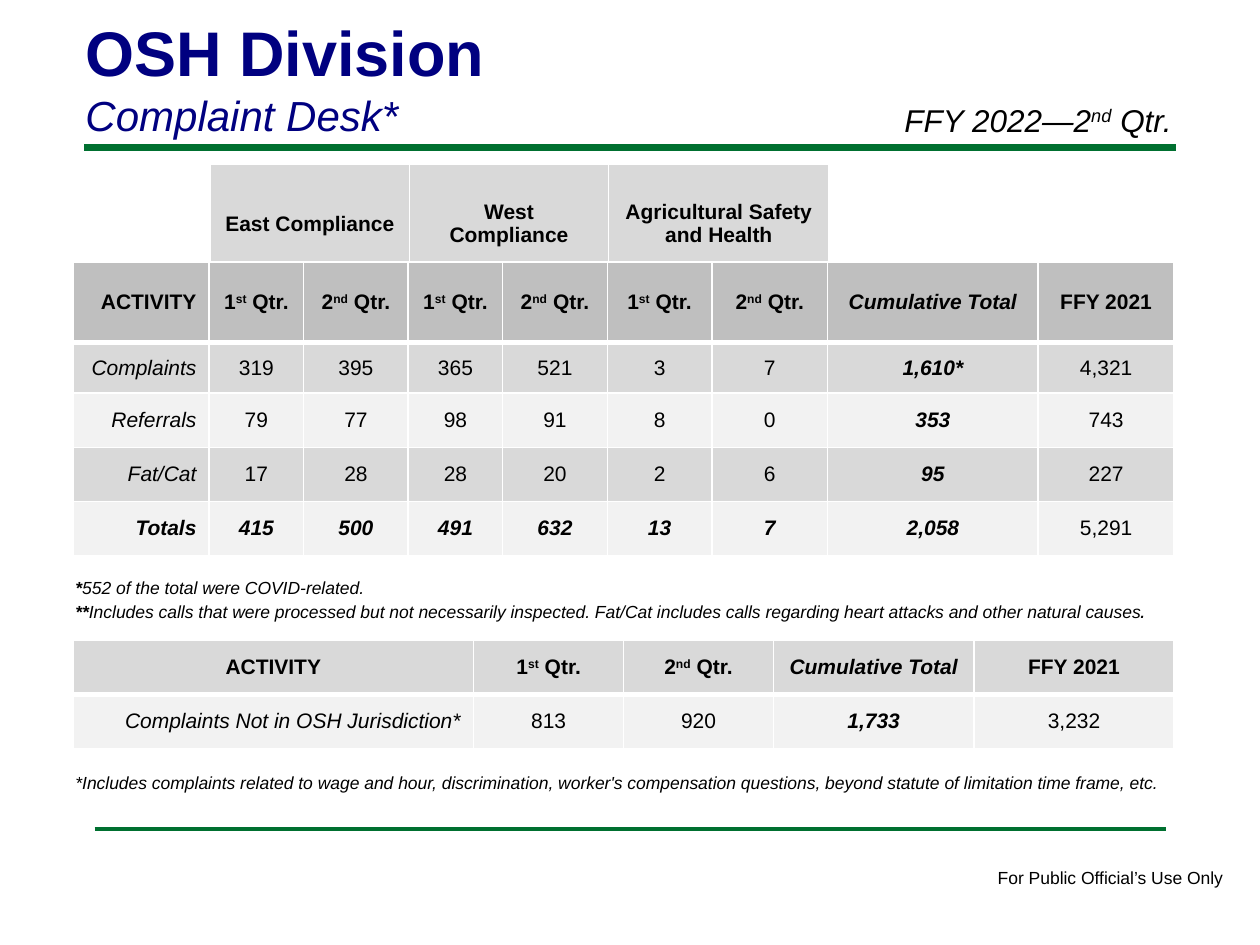
"""Build the OSH Division complaint desk slide."""
from dataclasses import dataclass
from typing import Optional

import pptx
import pptx.dml.color
import pptx.enum.shapes
import pptx.enum.text
import pptx.oxml
import pptx.oxml.ns
import pptx.util

Inches = pptx.util.Inches
Align = pptx.enum.text.PP_ALIGN
COLORS = {
    "green": "007030",
    "navy": "000080",
    "black": "000000",
    "white": "FFFFFF",
    "header": "BFBFBF",
    "dark": "D9D9D9",
    "light": "F2F2F2",
}


@dataclass(frozen=True)
class Piece:
    text: str
    bold: Optional[bool] = None
    size: Optional[float] = None
    raised: bool = False


@dataclass(frozen=True)
class Line:
    pieces: tuple[Piece, ...]
    size: float = 12
    bold: bool = False
    italic: bool = False
    color: str = "black"
    align: Align = Align.LEFT


@dataclass(frozen=True)
class Row:
    height: float
    fill: str
    cells: list[Line]
    bottom: float = 1


@dataclass(frozen=True)
class Rule:
    left: float
    right: float
    y: float
    weight: float


def line(text: str, **style) -> Line:
    return Line((Piece(text),), **style)


def quarter(number: str, suffix: str, **style) -> Line:
    return Line((Piece(number), Piece(suffix, raised=True), Piece(" Qtr.")), **style)


def rgb(name: str) -> pptx.dml.color.RGBColor:
    return pptx.dml.color.RGBColor.from_string(COLORS[name])


def write(tf, lines: list[Line]) -> None:
    for i, item in enumerate(lines):
        p = tf.add_paragraph() if i else tf.paragraphs[0]
        p.alignment = item.align
        p.font.name = "Arial"
        p.font.size = pptx.util.Pt(item.size)
        p.font.bold = item.bold
        p.font.italic = item.italic
        p.font.color.rgb = rgb(item.color)
        for piece in item.pieces:
            r = p.add_run()
            r.text = piece.text
            if piece.bold is not None:
                r.font.bold = piece.bold
            if piece.size:
                r.font.size = pptx.util.Pt(piece.size)
            if piece.raised:
                r.font._element.set("baseline", "30000")


def add_text(s, box: tuple[float, ...], lines: list[Line], wrap: bool = True) -> None:
    tf = s.shapes.add_textbox(*map(Inches, box)).text_frame
    tf.word_wrap = wrap
    write(tf, lines)


def add_rule(s, rule: Rule) -> None:
    y = Inches(rule.y)
    c = s.shapes.add_connector(
        pptx.enum.shapes.MSO_CONNECTOR.STRAIGHT, Inches(rule.left), y, Inches(rule.right), y
    )
    c.line.color.rgb = rgb("green")
    c.line.width = pptx.util.Pt(rule.weight)
    c._element.spPr.append(pptx.oxml.parse_xml(f'<a:effectLst {pptx.oxml.ns.nsdecls("a")}/>'))


def set_borders(cell, bottom: float) -> None:
    tc_pr = cell._tc.get_or_add_tcPr()
    for side, weight in {"L": 1, "R": 1, "T": 1, "B": bottom}.items():
        tc_pr.append(pptx.oxml.parse_xml(
            f'<a:ln{side} {pptx.oxml.ns.nsdecls("a")} w="{pptx.util.Pt(weight)}">'
            f'<a:solidFill><a:srgbClr val="{COLORS["white"]}"/></a:solidFill></a:ln{side}>'
        ))


def add_table(s, left: float, top: float, widths: list[float], rows: list[Row]) -> None:
    height = sum(row.height for row in rows)
    table = s.shapes.add_table(
        len(rows), len(widths), Inches(left), Inches(top), Inches(sum(widths)), Inches(height)
    ).table
    table.first_row = table.horz_banding = False
    for column, width in zip(table.columns, widths):
        column.width = Inches(width)
    for i, row in enumerate(rows):
        table.rows[i].height = Inches(row.height)
        for j, content in enumerate(row.cells):
            cell = table.cell(i, j)
            cell.vertical_anchor = pptx.enum.text.MSO_ANCHOR.MIDDLE
            set_borders(cell, row.bottom)
            cell.fill.solid()
            cell.fill.fore_color.rgb = rgb(row.fill)
            write(cell.text_frame, [content])


def header_cells(label_align: Align, offices: int) -> list[Line]:
    style = {"bold": True, "align": Align.CENTER}
    quarters = [quarter("1", "st", **style), quarter("2", "nd", **style)]
    return [
        line("ACTIVITY", bold=True, align=label_align),
        *quarters * offices,
        line("Cumulative Total", italic=True, **style),
        line("FFY 2021", **style),
    ]


def data_cells(label: str, counts: str, total: str, previous: str, strong: bool = False) -> list[Line]:
    return [
        line(label, bold=strong, italic=True, align=Align.RIGHT),
        *[line(n, bold=strong, italic=strong, align=Align.CENTER) for n in counts.split()],
        line(total, bold=True, italic=True, align=Align.CENTER),
        line(previous, align=Align.CENTER),
    ]


def main() -> None:
    prs = pptx.Presentation()
    prs.slide_width, prs.slide_height = Inches(10), Inches(7.5)
    s = prs.slides.add_slide(prs.slide_layouts[6])

    for rule in (Rule(0.67, 9.33, 1.17, 4), Rule(0.75, 9.25, 6.58, 2)):
        add_rule(s, rule)
    add_text(s, (7.82, 6.83, 2.01, 0.27), [line("For Public Official’s Use Only", size=10)], wrap=False)
    add_text(s, (0.5, 4.53, 8.83, 0.67), [
        Line((Piece("*", bold=True), Piece("552 of the total were COVID-related.")), size=10, italic=True),
        Line((
            Piece("**", bold=True),
            Piece("Includes calls that were processed but not necessarily inspected. "
                  "Fat/Cat includes calls regarding heart attacks and other natural causes"),
            Piece(".", size=12),
        ), size=10, italic=True),
    ])

    offices = ["East Compliance", "West Compliance", "Agricultural Safety and Health"]
    office_cells = [line(name, bold=True, align=Align.CENTER) for name in offices]
    add_table(s, 1.67, 1.3, [1.58, 1.58, 1.75], [Row(0.95, "dark", office_cells, 3)])
    add_text(s, (0.58, 0.06, 8.25, 1.11), [
        line("OSH Division", size=36, bold=True, color="navy"),
        line("Complaint Desk*", size=24, italic=True, color="navy"),
    ])
    add_table(s, 0.58, 5.08, [3.18, 1.19, 1.19, 1.59, 1.59], [
        Row(0.43, "dark", header_cells(Align.CENTER, 1), 3),
        Row(0.43, "light", data_cells("Complaints Not in OSH Jurisdiction*", "813 920", "1,733", "3,232")),
    ])
    add_text(s, (0.5, 6.08, 8.92, 0.27), [line(
        "*Includes complaints related to wage and hour, discrimination, worker's compensation "
        "questions, beyond statute of limitation time frame, etc.", size=10, italic=True)])
    add_table(s, 0.58, 2.08, [1.08, 0.75, 0.83, 0.75, 0.83, 0.83, 0.92, 1.67, 1.08], [
        Row(0.64, "header", header_cells(Align.RIGHT, len(offices)), 3),
        Row(0.4, "dark", data_cells("Complaints", "319 395 365 521 3 7", "1,610*", "4,321")),
        Row(0.43, "light", data_cells("Referrals", "79 77 98 91 8 0", "353", "743")),
        Row(0.43, "dark", data_cells("Fat/Cat", "17 28 28 20 2 6", "95", "227")),
        Row(0.43, "light", data_cells("Totals", "415 500 491 632 13 7", "2,058", "5,291", strong=True)),
    ])
    add_text(s, (7.08, 0.75, 2.5, 0.4), [quarter("FFY 2022—2", "nd", size=18, italic=True)])
    prs.save("out.pptx")


if __name__ == "__main__":
    main()
